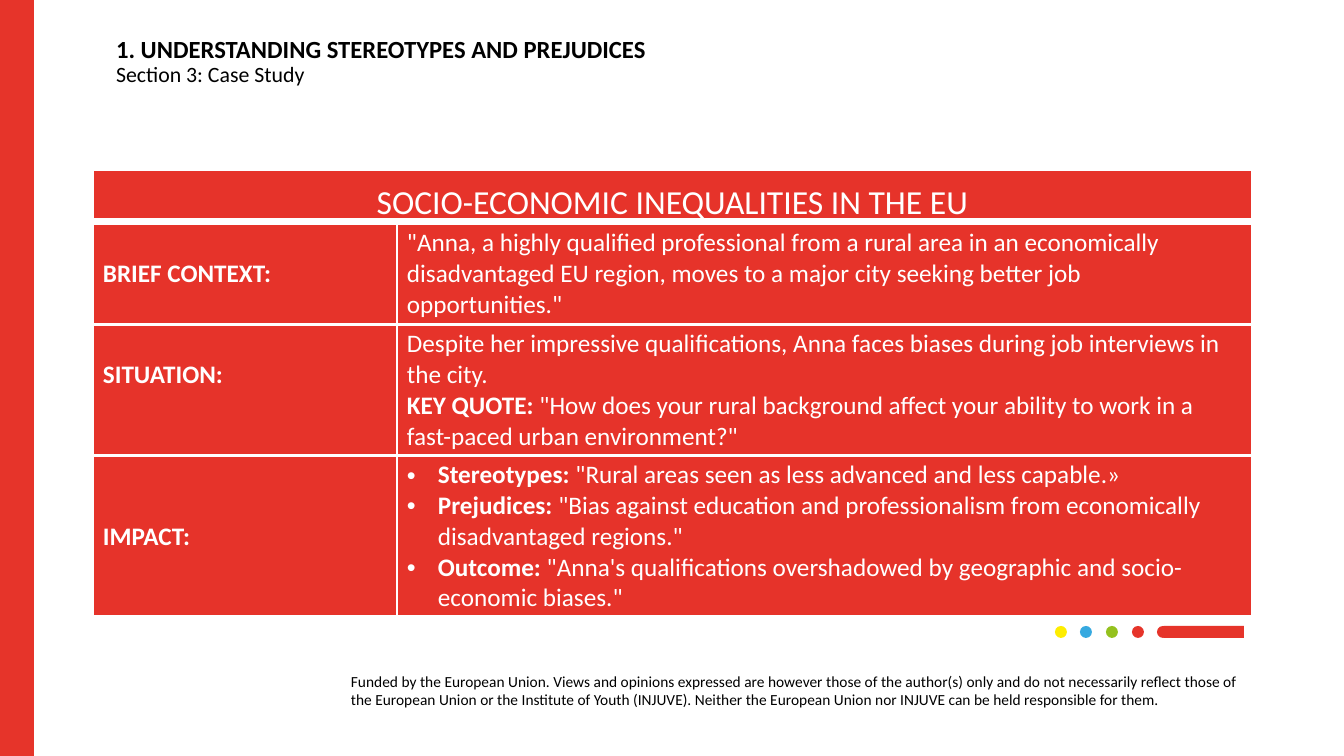
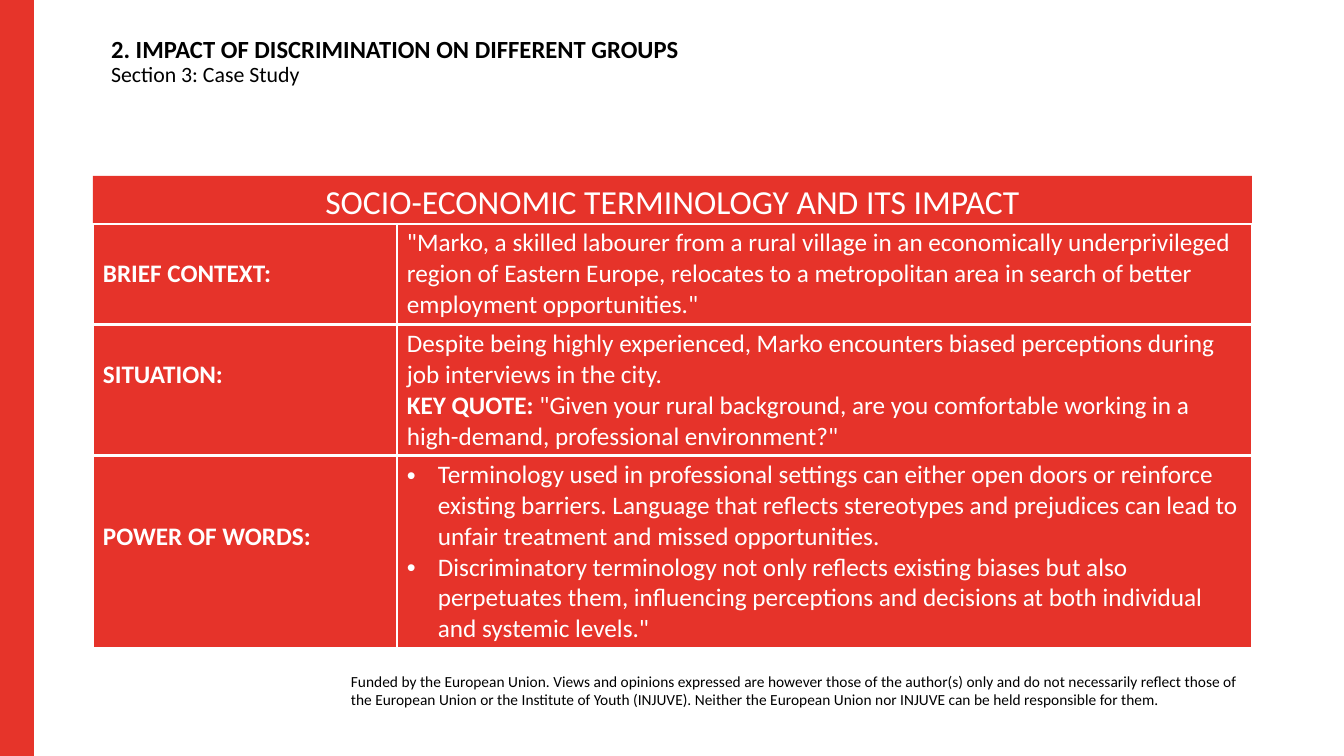
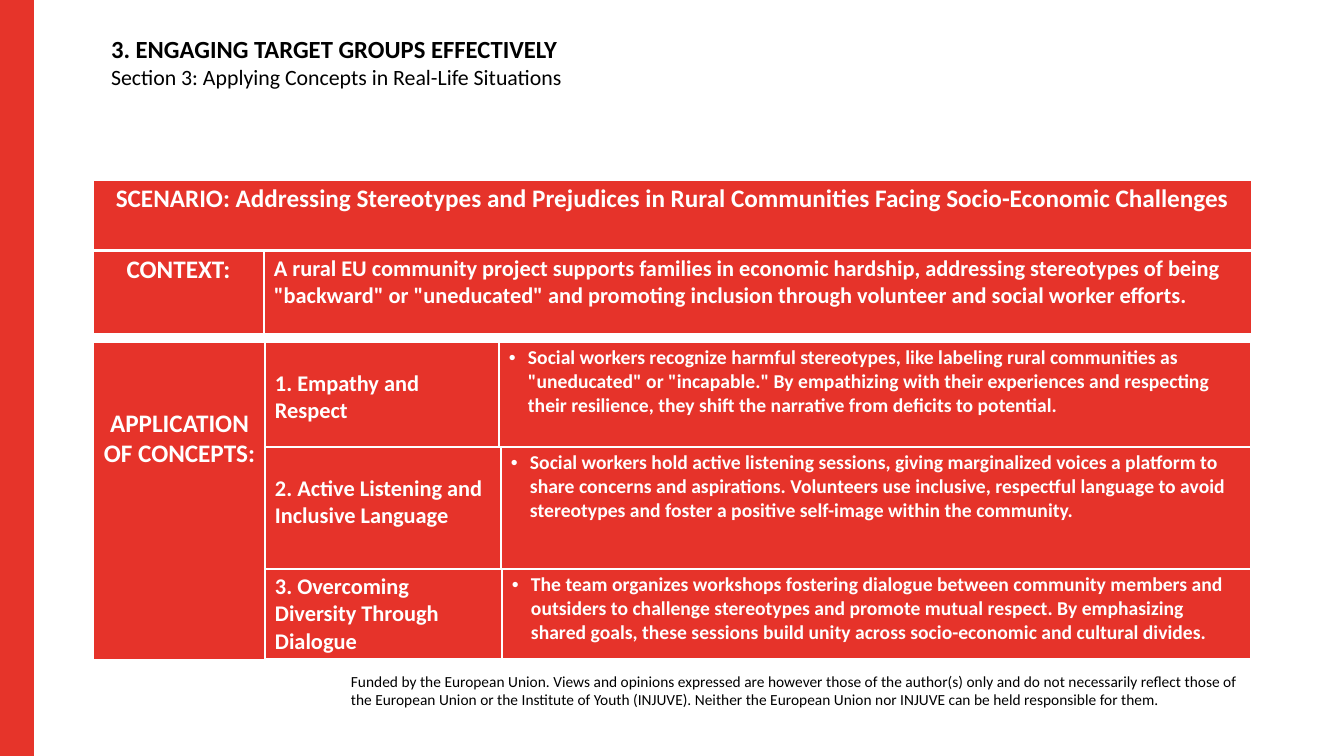
from dataclasses import dataclass
from typing import NamedTuple

from lxml.etree import SubElement
from pptx import Presentation
from pptx.dml.color import RGBColor
from pptx.enum.shapes import MSO_SHAPE as Shape
from pptx.enum.text import MSO_ANCHOR as Anchor, MSO_AUTO_SIZE as AutoSize, PP_ALIGN as Align
from pptx.oxml.ns import qn
from pptx.util import Pt

EMU_PER_PX = 914400 / 100.8
FONT = "Calibri"
COLORS = {
    "band": "E6342A",
    "cell": "E6332A",
    "green": "94C11E",
    "blue": "36A9E0",
    "yellow": "FEED00",
    "white": "FFFFFF",
    "black": "000000",
}
LEFT, WIDTH = 93, 1159
CASE_COLS = (304, 855)
CELL_PAD = 4
FUNDING = (
    "Funded by the European Union. Views and opinions expressed are however those of the "
    "author(s) only and do not necessarily reflect those of the European Union or the Institute "
    "of Youth (INJUVE). Neither the European Union nor INJUVE can be held responsible for them."
)


class Run(NamedTuple):
    text: str
    bold: bool = False


class Box(NamedTuple):
    x: int
    y: int
    w: int
    h: int


@dataclass(frozen=True)
class Cell:
    """Each paragraph is a list of runs; drop lowers the text, hang > 0 makes bullets."""
    paras: list[list[Run]]
    size: int = 18
    drop: int = 0
    hang: int = 0
    align: Align = Align.LEFT


@dataclass(frozen=True)
class Row:
    """A one-row table."""
    x: int
    y: int
    h: int
    cols: tuple[int, ...]
    cells: list[Cell]


@dataclass(frozen=True)
class Heading:
    title: str
    section: str
    x: int = 101
    section_spacing: float = 0.9


def px(n: float) -> int:
    return round(n * EMU_PER_PX)


def emu(box: Box) -> tuple[int, ...]:
    return tuple(px(n) for n in box)


def rgb(name: str) -> RGBColor:
    return RGBColor.from_string(COLORS[name])


def add_runs(p, runs: list[Run], size: float, color: str) -> None:
    for run in runs:
        r = p.add_run()
        r.text = run.text
        r.font.name = FONT
        r.font.size = Pt(size)
        r.font.bold = run.bold
        r.font.color.rgb = rgb(color)


def next_paragraph(tf, i: int):
    return tf.paragraphs[0] if i == 0 else tf.add_paragraph()


def add_bullet(p, hang: int) -> None:
    pPr = p._p.get_or_add_pPr()
    pPr.set("marL", str(px(hang)))
    pPr.set("indent", str(-px(hang)))
    SubElement(pPr, qn("a:buFont"), typeface="Arial")
    SubElement(pPr, qn("a:buChar"), char="•")


def add_borders(cell) -> None:
    tcPr = cell._tc.get_or_add_tcPr()
    for side, points in (("L", 1), ("R", 1), ("T", 1), ("B", 3)):
        ln = SubElement(tcPr, qn(f"a:ln{side}"), w=str(Pt(points)))
        fill = SubElement(ln, qn("a:solidFill"))
        SubElement(fill, qn("a:srgbClr"), val=COLORS["white"])


def fill_cell(cell, content: Cell) -> None:
    add_borders(cell)
    cell.fill.solid()
    cell.fill.fore_color.rgb = rgb("cell")
    cell.vertical_anchor = Anchor.TOP
    cell.margin_left = cell.margin_right = px(10)
    cell.margin_top = px(CELL_PAD + content.drop)
    cell.margin_bottom = px(CELL_PAD)
    for i, runs in enumerate(content.paras):
        p = next_paragraph(cell.text_frame, i)
        p.alignment = content.align
        if content.hang:
            add_bullet(p, content.hang)
        add_runs(p, runs, content.size, "white")


def add_row(slide, row: Row) -> None:
    box = Box(row.x, row.y, sum(row.cols), row.h)
    table = slide.shapes.add_table(1, len(row.cols), *emu(box)).table
    table.first_row = table.horz_banding = False
    for col, w in zip(table.columns, row.cols):
        col.width = px(w)
    for i, content in enumerate(row.cells):
        fill_cell(table.cell(0, i), content)


def add_solid(shapes, kind: Shape, box: Box, color: str):
    sp = shapes.add_shape(kind, *emu(box))
    sp.shadow.inherit = False
    sp.fill.solid()
    sp.fill.fore_color.rgb = rgb(color)
    sp.line.fill.background()
    return sp


def add_text(sp, text: str, size: float, color: str, align: Align) -> None:
    tf = sp.text_frame
    tf.word_wrap = True
    tf.vertical_anchor = Anchor.TOP
    p = tf.paragraphs[0]
    p.alignment = align
    add_runs(p, [Run(text)], size, color)


def build_layout(layout, slide) -> None:
    """Draw the shared parts on a slide and move them to its layout."""
    for ph in list(layout.placeholders):
        if ph.placeholder_format.idx:
            ph.element.getparent().remove(ph.element)
    side = add_solid(slide.shapes, Shape.RECTANGLE, Box(0, 0, 34, 756), "band")
    dots = slide.shapes.add_group_shape()
    add_solid(dots.shapes, Shape.RECTANGLE, Box(1164, 626, 80, 12), "band")
    for i, color in enumerate(("yellow", "blue", "green", "band", "band")):
        x = 1055 + 77 * i // 3
        add_solid(dots.shapes, Shape.OVAL, Box(x, 626, 12, 12), color)
    funding = slide.shapes.add_textbox(*emu(Box(341, 667, 910, 47)))
    add_text(funding, FUNDING, 11, "black", Align.LEFT)
    for sp in (side, dots, funding):
        layout.shapes.element.append(sp.element)


def set_heading(slide, heading: Heading) -> None:
    sp = slide.shapes.title
    sp.left, sp.top, sp.width, sp.height = emu(Box(heading.x, 32, 766, 70))
    tf = sp.text_frame
    tf.word_wrap = True
    tf.auto_size = AutoSize.NONE
    tf.vertical_anchor = Anchor.TOP
    lines = (
        (Run(heading.title, True), 17.6, 0.9),
        (Run(heading.section), 15.6, heading.section_spacing),
    )
    for i, (run, size, spacing) in enumerate(lines):
        p = next_paragraph(tf, i)
        p.alignment = Align.LEFT
        p.line_spacing = spacing
        add_runs(p, [run], size, "black")


def add_case(slide, title: str, filled: bool, rows: list[tuple[str, int, int, Cell]]) -> None:
    """Banner title over label/text rows; each row is label, label drop, height, text."""
    box = Box(LEFT, 176, WIDTH, 50)
    if filled:
        sp = add_solid(slide.shapes, Shape.RECTANGLE, box, "cell")
    else:
        add_row(slide, Row(LEFT, 170, 50, (WIDTH,), [Cell([])]))
        sp = slide.shapes.add_textbox(*emu(box))
    add_text(sp, title, 24, "white", Align.CENTER)
    y = 224
    for label, drop, h, content in rows:
        cells = [Cell([[Run(label, True)]], drop=drop), content]
        add_row(slide, Row(LEFT, y, h, CASE_COLS, cells))
        y += h


def bold_cell(text: str, size: int, drop: int = 0, hang: int = 0,
              align: Align = Align.LEFT) -> Cell:
    return Cell([[Run(text, True)]], size, drop, hang, align)


def add_stereotypes(slide) -> None:
    set_heading(slide, Heading("1. UNDERSTANDING STEREOTYPES AND PREJUDICES",
                               "Section 3: Case Study", x=106))
    add_case(slide, "SOCIO-ECONOMIC INEQUALITIES IN THE EU", False, [
        ("BRIEF CONTEXT:", 31, 101, Cell([[Run(
            '"Anna, a highly qualified professional from a rural area in an economically '
            'disadvantaged EU region, moves to a major city seeking better job '
            'opportunities."')]])),
        ("SITUATION:", 31, 131, Cell([
            [Run("Despite her impressive qualifications, Anna faces biases during job "
                 "interviews in the city.")],
            [Run("KEY QUOTE: ", True),
             Run('"How does your rural background affect your ability to work in a '
                 'fast-paced urban environment?"')],
        ])),
        ("IMPACT:", 62, 161, Cell([
            [Run("Stereotypes: ", True),
             Run('"Rural areas seen as less advanced and less capable.»')],
            [Run("Prejudices: ", True),
             Run('"Bias against education and professionalism from economically '
                 'disadvantaged regions."')],
            [Run("Outcome: ", True),
             Run('"Anna\'s qualifications overshadowed by geographic and socio-economic '
                 'biases."')],
        ], hang=31)),
    ])


def add_discrimination(slide) -> None:
    set_heading(slide, Heading("2. IMPACT OF DISCRIMINATION ON DIFFERENT GROUPS",
                               "Section 3: Case Study"))
    add_case(slide, "SOCIO-ECONOMIC TERMINOLOGY AND ITS IMPACT", True, [
        ("BRIEF CONTEXT:", 31, 101, Cell([[Run(
            '"Marko, a skilled labourer from a rural village in an economically '
            'underprivileged region of Eastern Europe, relocates to a metropolitan area in '
            'search of better employment opportunities."')]])),
        ("SITUATION:", 31, 131, Cell([
            [Run("Despite being highly experienced, Marko encounters biased perceptions "
                 "during job interviews in the city.")],
            [Run("KEY QUOTE: ", True),
             Run('"Given your rural background, are you comfortable working in a '
                 'high-demand, professional environment?"')],
        ])),
        ("POWER OF WORDS:", 62, 192, Cell([
            [Run("Terminology used in professional settings can either open doors or "
                 "reinforce existing barriers. Language that reflects stereotypes and "
                 "prejudices can lead to unfair treatment and missed opportunities.")],
            [Run("Discriminatory terminology not only reflects existing biases but also "
                 "perpetuates them, influencing perceptions and decisions at both "
                 'individual and systemic levels."')],
        ], hang=31)),
    ])


def add_engagement(slide) -> None:
    set_heading(slide, Heading("3. ENGAGING TARGET GROUPS EFFECTIVELY",
                               "Section 3: Applying Concepts in Real-Life Situations",
                               section_spacing=1.0))
    add_row(slide, Row(LEFT, 180, 71, (WIDTH,), [bold_cell(
        "SCENARIO: Addressing Stereotypes and Prejudices in Rural Communities Facing "
        "Socio-Economic Challenges", 18, align=Align.CENTER)]))
    add_row(slide, Row(LEFT, 251, 84, (171, 988), [
        bold_cell("CONTEXT:", 18, align=Align.CENTER),
        bold_cell("A rural EU community project supports families in economic hardship, "
                  'addressing stereotypes of being "backward" or "uneducated" and promoting '
                  "inclusion through volunteer and social worker efforts.", 16),
    ]))
    add_row(slide, Row(LEFT, 342, 319, (173,), [
        bold_cell("APPLICATION OF CONCEPTS:", 18, drop=62, align=Align.CENTER)]))
    concepts = (
        (342, 107, 234, 24, "1. Empathy and Respect",
         'Social workers recognize harmful stereotypes, like labeling rural communities as '
         '"uneducated" or "incapable." By empathizing with their experiences and respecting '
         'their resilience, they shift the narrative from deficits to potential.'),
        (447, 123, 236, 24, "2. Active Listening and Inclusive Language",
         "Social workers hold active listening sessions, giving marginalized voices a "
         "platform to share concerns and aspirations. Volunteers use inclusive, respectful "
         "language to avoid stereotypes and foster a positive self-image within the "
         "community."),
        (569, 91, 237, 0, "3. Overcoming Diversity Through Dialogue",
         "The team organizes workshops fostering dialogue between community members and "
         "outsiders to challenge stereotypes and promote mutual respect. By emphasizing "
         "shared goals, these sessions build unity across socio-economic and cultural "
         "divides."),
    )
    for y, h, label_w, drop, label, text in concepts:
        add_row(slide, Row(265, y, h, (label_w, 986 - label_w), [
            bold_cell(label, 16, drop=drop),
            bold_cell(text, 14, hang=19),
        ]))


def main() -> None:
    prs = Presentation()
    prs.slide_width, prs.slide_height = px(1344), px(756)
    layout = prs.slide_layouts.get_by_name("Title Only")
    builders = (add_stereotypes, add_discrimination, add_engagement)
    slides = [prs.slides.add_slide(layout) for _ in builders]
    build_layout(layout, slides[0])
    for build, slide in zip(builders, slides):
        build(slide)
    prs.save("out.pptx")


if __name__ == "__main__":
    main()
